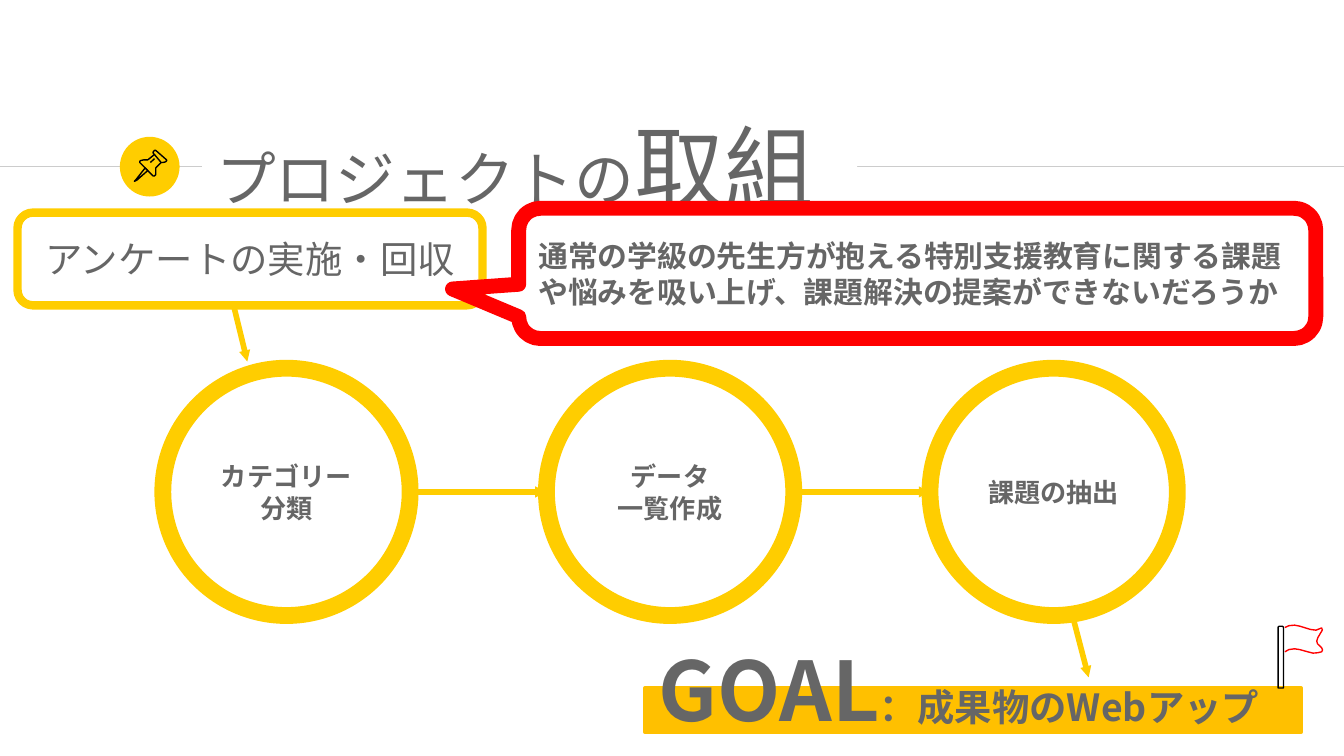
from lxml import etree
from pptx import Presentation
from pptx.dml.color import RGBColor
from pptx.enum.shapes import MSO_CONNECTOR, MSO_SHAPE
from pptx.enum.text import MSO_ANCHOR, PP_ALIGN
from pptx.oxml.ns import qn
from pptx.util import Pt

RECT, ROUND = MSO_SHAPE.RECTANGLE, MSO_SHAPE.ROUNDED_RECTANGLE
OVAL, BUBBLE = MSO_SHAPE.OVAL, MSO_SHAPE.ROUNDED_RECTANGULAR_CALLOUT
STRAIGHT = MSO_CONNECTOR.STRAIGHT
MIDDLE, LEFT, CENTER = MSO_ANCHOR.MIDDLE, PP_ALIGN.LEFT, PP_ALIGN.CENTER

FONT = "Noto Sans CJK JP"
COLORS = {"text": "666666", "yellow": "FFCD00", "amber": "FFC000", "red": "FF0000",
          "grey": "CCCCCC", "white": "FFFFFF", "black": "000000"}

STEPS = ["カテゴリー分類", "データ\v一覧作成", "課題の抽出"]
STEP_X, STEP_Y, STEP_D, PITCH = 87.25, 197.3, 132.5, 205.5

NEEDLE = [(77.8, 90), (72.7, 96.5), (72, 97.2), (73.4, 96.5), (79.2, 91.4)]
CAP = [(82.8, 82.8), (86.4, 87.1), (87.1, 87.1), (88.6, 86.8), (89.3, 86.2),
       (89.3, 85.7), (83.5, 80.6), (82.8, 80.6), (82.1, 81.4), (82.1, 82.1)]
BODY = [(82.8, 82.8), (79.2, 85.7), (77, 85.7), (75.6, 86), (74.9, 86.4), (74.9, 87.1),
        (82.1, 94.3), (82.8, 94.3), (83.5, 93.6), (83.5, 90), (86.4, 87.1)]
GLINT = [(80.6, 87.1), (82.8, 85)]
POLE = [(687.6, 368.6), (687.6, 336), (687, 335.5), (685.3, 335.5), (684.7, 336),
        (684.7, 368.6)]
CLOTH = [(688.3, 349.2), (690.5, 348), (693.5, 347.6), (696.2, 348), (700.6, 349.2),
         (703.4, 349.9), (706, 349.7), (708, 349.2), (708.5, 348.2), (708, 347),
         (705.8, 344.9), (705.4, 343.4), (706, 341.6), (708.4, 337.5), (708, 336.4),
         (705, 337.6), (702, 337.2), (696.5, 335.5), (693.5, 334.9), (690.5, 335.2),
         (688.3, 336.2)]


def rgb(name):
    """Return the named colour."""
    return RGBColor.from_string(COLORS[name])


def paint(shape, fill=None, line=None, width=0.75):
    """Set fill, outline and shadow of a shape."""
    shape.shadow.inherit = False
    if fill:
        shape.fill.solid()
        shape.fill.fore_color.rgb = rgb(fill)
    else:
        shape.fill.background()
    if line:
        shape.line.color.rgb = rgb(line)
        shape.line.width = Pt(width)
    else:
        shape.line.fill.background()


def add_box(slide, kind, box, fill=None, line=None, width=0.75):
    """Add a preset shape."""
    shape = slide.shapes.add_shape(kind, *map(Pt, box))
    paint(shape, fill, line, width)
    return shape


def write(shape, parts, bold=False, align=CENTER, inset=3.6):
    """Fill a shape with one paragraph of (text, size) parts."""
    frame = shape.text_frame
    frame.word_wrap = True
    frame.vertical_anchor = MIDDLE
    frame.margin_left = frame.margin_right = Pt(7.2)
    frame.margin_top = frame.margin_bottom = Pt(inset)
    para = frame.paragraphs[0]
    para.alignment = align
    for text, size in parts:
        start = len(para.runs)
        if start:
            para.add_run().text = text
        else:
            para.text = text
        for run in para.runs[start:]:
            font = run.font
            font.name, font.size, font.bold = FONT, Pt(size), bold
            font.color.rgb = rgb("text")
            etree.SubElement(font._element, qn("a:ea"), typeface=FONT)


def add_line(slide, ends, color, width, arrow=False):
    """Draw a straight line, with an arrowhead if wanted."""
    link = slide.shapes.add_connector(STRAIGHT, *map(Pt, ends))
    link.line.color.rgb = rgb(color)
    link.line.width = Pt(width)
    if arrow:
        etree.SubElement(link.line._get_or_add_ln(), qn("a:tailEnd"),
                         type="triangle", w="sm", len="sm")
    etree.SubElement(link._element.spPr, qn("a:effectLst"))


def add_path(slide, points, color="black", close=True):
    """Draw an unfilled outline through the points."""
    spots = [(Pt(x), Pt(y)) for x, y in points]
    pen = slide.shapes.build_freeform(*spots[0])
    pen.add_line_segments(spots[1:], close=close)
    paint(pen.convert_to_shape(), line=color)


def add_title(slide):
    """Add the heading with its rules and pin badge."""
    add_line(slide, (0, 89.3, 108, 89.3), "grey", 0.75)
    add_box(slide, OVAL, (64.2, 73.3, 32, 32), "yellow")
    add_line(slide, (414.7, 89.3, 720, 89.3), "grey", 0.75)
    title = add_box(slide, RECT, (108.7, 51.1, 350.6, 74.9), "white")
    write(title, [("プロジェクトの", 32), ("取組", 48)], align=LEFT, inset=7.2)
    for points in (NEEDLE, CAP):
        add_path(slide, points)
    for points in (BODY, GLINT):
        add_path(slide, points, close=False)


def add_steps(slide):
    """Add the step rings and the arrows between them."""
    mid = STEP_Y + STEP_D / 2
    for i, name in enumerate(STEPS):
        left = STEP_X + i * PITCH
        ring = add_box(slide, OVAL, (left, STEP_Y, STEP_D, STEP_D), None, "yellow", 9)
        write(ring, [(name, 14)], bold=True, inset=7.2)
        if i:
            add_line(slide, (left - PITCH + STEP_D, mid, left, mid), "yellow", 3, True)


def add_survey(slide):
    """Add the survey box and its arrow to the first step."""
    add_line(slide, (125.3, 164.2, 132.5, 193.7), "yellow", 3, True)
    box = add_box(slide, ROUND, (9.4, 113.9, 249.1, 49.7), None, "yellow", 4.5)
    write(box, [("アンケートの実施・回収", 20)])


def add_goal(slide):
    """Add the goal text, its arrow and the flag."""
    goal = add_box(slide, ROUND, (331.2, 351.4, 365, 34.6))
    write(goal, [("GOAL", 44), ("：成果物のWebアップ", 20)], bold=True)
    add_line(slide, (575.3, 332.6, 583.2, 362.9), "yellow", 3, True)
    add_path(slide, POLE)
    add_path(slide, CLOTH, "red", close=False)


def add_bubble(slide):
    """Add the red speech bubble."""
    bubble = add_box(slide, BUBBLE, (277.9, 111.6, 427, 69.8), None, "red", 8)
    for i, value in enumerate((-0.583, 0.12, 0.167)):
        bubble.adjustments[i] = value
    text = "通常の学級の先生方が抱える特別支援教育に関する課題や悩みを吸い上げ、課題解決の提案ができないだろうか"
    write(bubble, [(text, 16)], bold=True, align=LEFT)


def main():
    """Build and save the slide."""
    deck = Presentation()
    deck.slide_width, deck.slide_height = Pt(720), Pt(405)
    slide = deck.slides.add_slide(deck.slide_layouts[6])
    add_box(slide, RECT, (345.6, 368.6, 351.4, 23.8), "amber", "amber", 2)
    add_title(slide)
    add_steps(slide)
    add_survey(slide)
    add_goal(slide)
    add_bubble(slide)
    deck.save("out.pptx")


if __name__ == "__main__":
    main()
